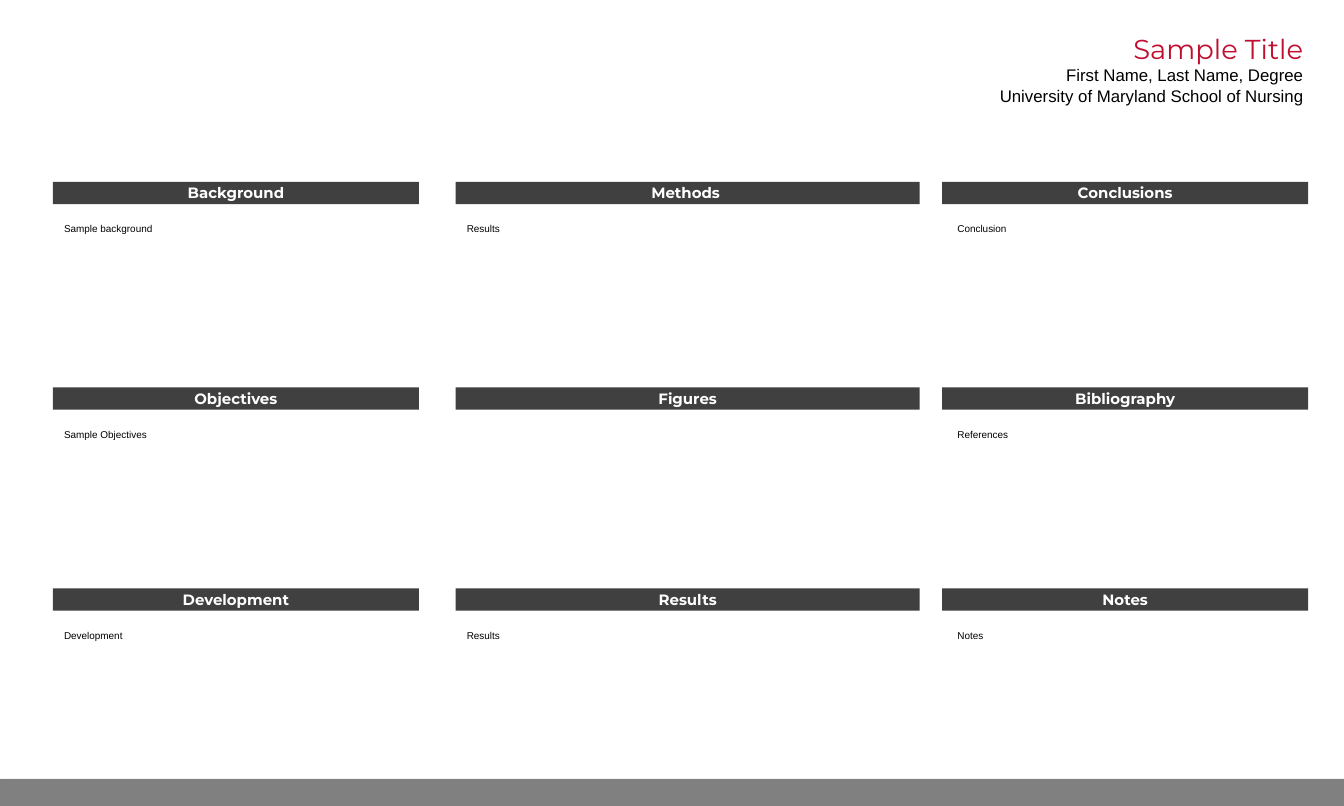
"""Build a research poster with a title and a three by three grid of sections."""
from lxml import etree
from pptx import Presentation
from pptx.dml.color import RGBColor
from pptx.enum.shapes import MSO_SHAPE
from pptx.enum.text import MSO_ANCHOR, MSO_AUTO_SIZE, PP_ALIGN
from pptx.oxml.ns import qn
from pptx.util import Emu, Pt

RECTANGLE = MSO_SHAPE.RECTANGLE
TOP, MIDDLE = MSO_ANCHOR.TOP, MSO_ANCHOR.MIDDLE
LEFT, CENTER, RIGHT = PP_ALIGN.LEFT, PP_ALIGN.CENTER, PP_ALIGN.RIGHT
NO_AUTOFIT = MSO_AUTO_SIZE.NONE

EMU_PER_PX = 9144
PAGE_WIDTH, PAGE_HEIGHT = 3000, 1800
HEADING_FONT, BODY_FONT = "Montserrat", "Arial"
RED, BLACK, WHITE = "BF0E2F", "000000", "FFFFFF"
DARK_GRAY, FOOTER_GRAY = "404040", "808080"

TITLE_LINES = [
    ("Sample Title", 44, HEADING_FONT, RED),
    ("First Name, Last Name, Degree", 27, BODY_FONT, BLACK),
    ("University of Maryland School of Nursing", 27, BODY_FONT, BLACK),
]
COLUMNS = [(118, 817, 0), (1017, 1036, 0), (2103, 817, 9)]
ROW_TOPS = [406, 865, 1314]
HEADING_HEIGHT, BODY_OFFSET, BODY_HEIGHT = 50, 81, 49
SECTIONS = [
    [("Background", "Sample background"), ("Methods ", "Results"), ("Conclusions", "Conclusion")],
    [("Objectives", "Sample Objectives"), ("Figures", ""), ("Bibliography", "References")],
    [("Development", "Development"), ("Results", "Results"), ("Notes", "Notes")],
]


def px(length):
    return Emu(length * EMU_PER_PX)


def color(value):
    return RGBColor.from_string(value)


class Poster:
    def __init__(self):
        self.deck = Presentation()
        self.deck.slide_width, self.deck.slide_height = px(PAGE_WIDTH), px(PAGE_HEIGHT)
        self.page = self.deck.slides.add_slide(self.deck.slide_layouts[5])

    def fill_text(self, box, lines, align, anchor, margins, bold=False):
        frame = box.text_frame
        frame.word_wrap = True
        frame.auto_size = NO_AUTOFIT
        frame.vertical_anchor = anchor
        frame.margin_left = frame.margin_right = px(margins[0])
        frame.margin_top = frame.margin_bottom = px(margins[1])
        for index, (text, size, font, text_color) in enumerate(lines):
            para = frame.add_paragraph() if index else frame.paragraphs[0]
            para.alignment = align
            span = para.add_run()
            span.text = text
            span.font.size = Pt(size)
            span.font.name = font
            span.font.bold = bold
            span.font.color.rgb = color(text_color)

    def title(self, left, top, width, height, lines):
        box = self.page.shapes.title
        box.left, box.top, box.width, box.height = map(px, (left, top, width, height))
        self.fill_text(box, lines, RIGHT, TOP, (25, 11))

    def bar(self, left, top, width, height, fill):
        bar = self.page.shapes.add_shape(RECTANGLE, *map(px, (left, top, width, height)))
        bar.shadow.inherit = False
        bar.fill.solid()
        bar.fill.fore_color.rgb = color(fill)
        bar.line.fill.background()
        return bar

    def heading(self, left, top, width, text):
        bar = self.bar(left, top, width, HEADING_HEIGHT, DARK_GRAY)
        self.fill_text(bar, [(text, 24, HEADING_FONT, WHITE)], CENTER, MIDDLE, (10, 5), True)

    def body(self, left, top, width, text):
        box = self.page.shapes.add_textbox(*map(px, (left, top, width, BODY_HEIGHT)))
        self.fill_text(box, [(text, 16, BODY_FONT, BLACK)], LEFT, TOP, (25, 11))

    def footer(self, top):
        bar = self.bar(0, top, PAGE_WIDTH, PAGE_HEIGHT - top, FOOTER_GRAY)
        effects = bar.element.spPr.find(qn("a:effectLst"))
        shadow = etree.SubElement(effects, qn("a:outerShdw"), blurRad=str(Pt(3.1)),
                                  dist=str(Pt(1.8)), dir="5400000", rotWithShape="0")
        tint = etree.SubElement(shadow, qn("a:srgbClr"), val=BLACK)
        etree.SubElement(tint, qn("a:alpha"), val="35000")


def main():
    poster = Poster()
    poster.footer(1740)
    poster.title(1341, 61, 1593, 187, TITLE_LINES)
    for top, row in zip(ROW_TOPS, SECTIONS):
        for (left, width, indent), (heading, body) in zip(COLUMNS, row):
            poster.heading(left, top, width, heading)
            if body:
                poster.body(left + indent, top + BODY_OFFSET, width - indent, body)
    poster.deck.save("out.pptx")


if __name__ == "__main__":
    main()
